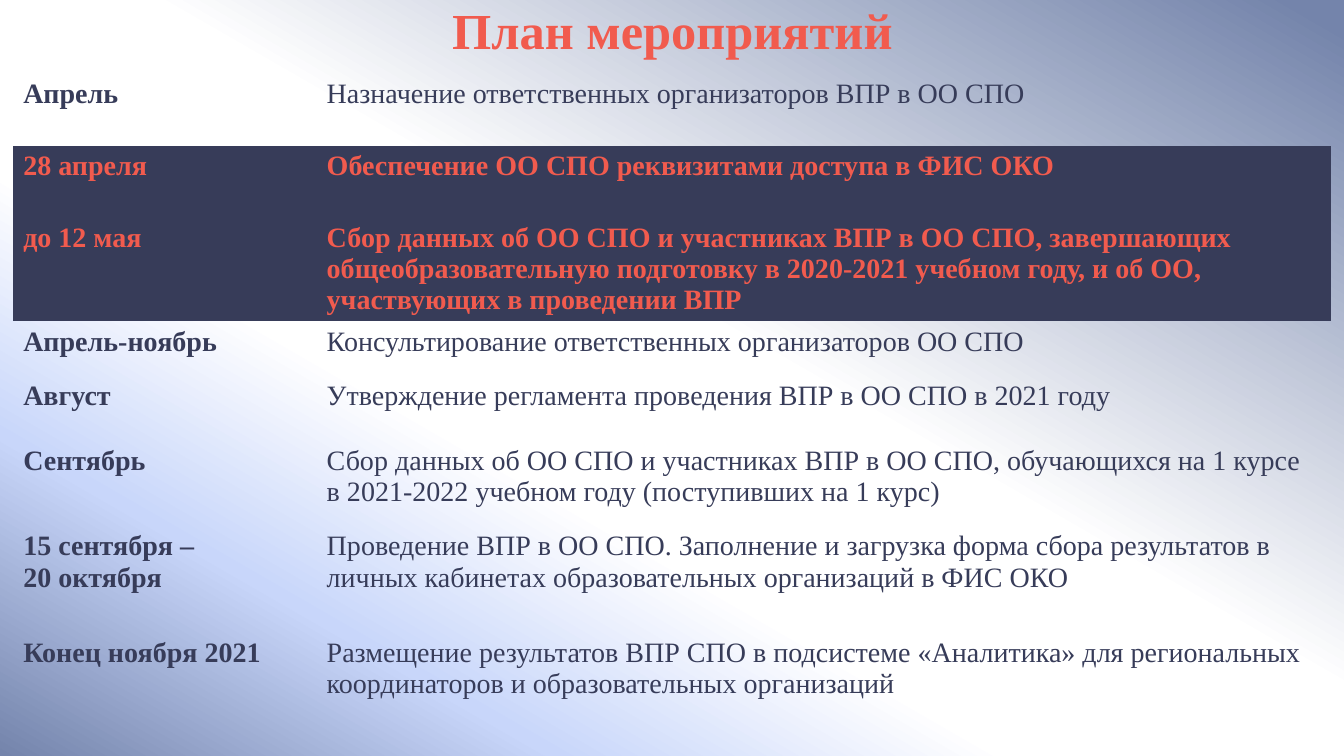
"""Build the slide with the plan of events."""
from copy import deepcopy
from dataclasses import dataclass

from pptx import Presentation
from pptx.dml.color import RGBColor
from pptx.enum.text import MSO_ANCHOR, MSO_AUTO_SIZE, PP_ALIGN
from pptx.oxml.ns import qn
from pptx.slide import Slide
from pptx.text.text import TextFrame
from pptx.util import Inches, Pt

WIDTH, HEIGHT = Inches(13.33), Inches(7.5)
NO_STYLE = "{2D5ABB26-0587-4C30-8999-92F81FD0307C}"


@dataclass(frozen=True)
class Theme:
    """Hold the font, colours and type sizes."""
    font: str = "Times New Roman"
    navy: str = "373C59"
    coral: str = "F15B4E"
    head: int = 36
    body: int = 20
    angle: int = 240
    stops: tuple[tuple[int, str], ...] = (
        (0, "7484AB"), (2, "7484AB"), (45, "FFFFFF"),
        (62, "FFFFFF"), (79, "C8D6FA"), (100, "7484AB"))


@dataclass(frozen=True)
class Event:
    """Describe one table row; tall is a percentage of slide height."""
    date: str
    task: str
    tall: float
    marked: bool = False
    bold: bool = False


THEME = Theme()
COLUMNS = (22.58, 75.47)
EVENTS = (
    Event("Апрель", "Назначение ответственных организаторов ВПР в ОО СПО", 9.53),
    Event("28 апреля", "Обеспечение ОО СПО реквизитами доступа в ФИС ОКО",
          9.53, marked=True, bold=True),
    Event("до 12 мая",
          "Сбор данных об ОО СПО и участниках ВПР в ОО СПО, завершающих "
          "общеобразовательную подготовку в 2020-2021 учебном году, и об ОО, "
          "участвующих в проведении ВПР", 13.73, marked=True, bold=True),
    Event("Апрель-ноябрь",
          "Консультирование ответственных организаторов ОО СПО", 7.2),
    Event("Август",
          "Утверждение регламента проведения ВПР в ОО СПО в 2021 году", 8.53),
    Event("Сентябрь",
          "Сбор данных об ОО СПО и участниках ВПР в ОО СПО, обучающихся на "
          "1 курсе в 2021-2022 учебном году (поступивших на 1 курс)", 11.33),
    Event("15 сентября –\n20 октября",
          "Проведение ВПР в ОО СПО. Заполнение и загрузка форма сбора "
          "результатов в личных кабинетах образовательных организаций в ФИС ОКО",
          14.13),
    Event("Конец ноября 2021",
          "Размещение результатов ВПР СПО в подсистеме «Аналитика» для "
          "региональных координаторов и образовательных организаций", 12.67),
)


def across(share: float) -> int:
    """Turn a percentage of the slide width into a length."""
    return round(WIDTH * share / 100)


def down(share: float) -> int:
    """Turn a percentage of the slide height into a length."""
    return round(HEIGHT * share / 100)


def write(frame: TextFrame, text: str, size: int, tint: str, bold: bool) -> None:
    """Set the text of a frame and format its runs."""
    frame.text = text
    for line in frame.paragraphs:
        for run in line.runs:
            run.font.name = THEME.font
            run.font.size = Pt(size)
            run.font.bold = bold
            run.font.color.rgb = RGBColor.from_string(tint)


def paint(slide: Slide) -> None:
    """Fill the background with the theme gradient."""
    fill = slide.background.fill
    fill.gradient()
    fill.gradient_angle = THEME.angle
    stops = next(slide.element.iter(qn("a:gsLst")))
    while len(stops) < len(THEME.stops):
        stops.append(deepcopy(stops[0]))
    for stop, (place, tint) in zip(fill.gradient_stops, THEME.stops):
        stop.position = place / 100
        stop.color.rgb = RGBColor.from_string(tint)


def add_head(slide: Slide) -> None:
    """Place and format the title."""
    head = slide.shapes.title
    head.left, head.top = across(6.9), down(1.47)
    head.width, head.height = across(86.27), down(5.87)
    frame = head.text_frame
    write(frame, "План мероприятий", THEME.head, THEME.coral, True)
    frame.auto_size = MSO_AUTO_SIZE.NONE
    frame.vertical_anchor = MSO_ANCHOR.MIDDLE
    frame.paragraphs[0].alignment = PP_ALIGN.CENTER
    frame.paragraphs[0].line_spacing = 0.9


def add_plan(slide: Slide) -> None:
    """Draw the table of events."""
    table = slide.shapes.add_table(
        len(EVENTS), len(COLUMNS), across(0.98), down(9.73),
        across(sum(COLUMNS)), down(sum(event.tall for event in EVENTS))).table
    table.first_row = table.horz_banding = False
    next(slide.element.iter(qn("a:tableStyleId"))).text = NO_STYLE
    for column, share in zip(table.columns, COLUMNS):
        column.width = across(share)
    for row, event in zip(table.rows, EVENTS):
        row.height = down(event.tall)
        tint = THEME.coral if event.marked else THEME.navy
        pairs = ((event.date, True), (event.task, event.bold))
        for cell, (text, bold) in zip(row.cells, pairs):
            write(cell.text_frame, text, THEME.body, tint, bold)
            if event.marked:
                cell.fill.solid()
                cell.fill.fore_color.rgb = RGBColor.from_string(THEME.navy)
            else:
                cell.fill.background()


def main() -> None:
    """Build and save the deck."""
    deck = Presentation()
    deck.slide_width, deck.slide_height = WIDTH, HEIGHT
    slide = deck.slides.add_slide(deck.slide_layouts[5])
    paint(slide)
    add_head(slide)
    add_plan(slide)
    deck.save("out.pptx")


if __name__ == "__main__":
    main()
